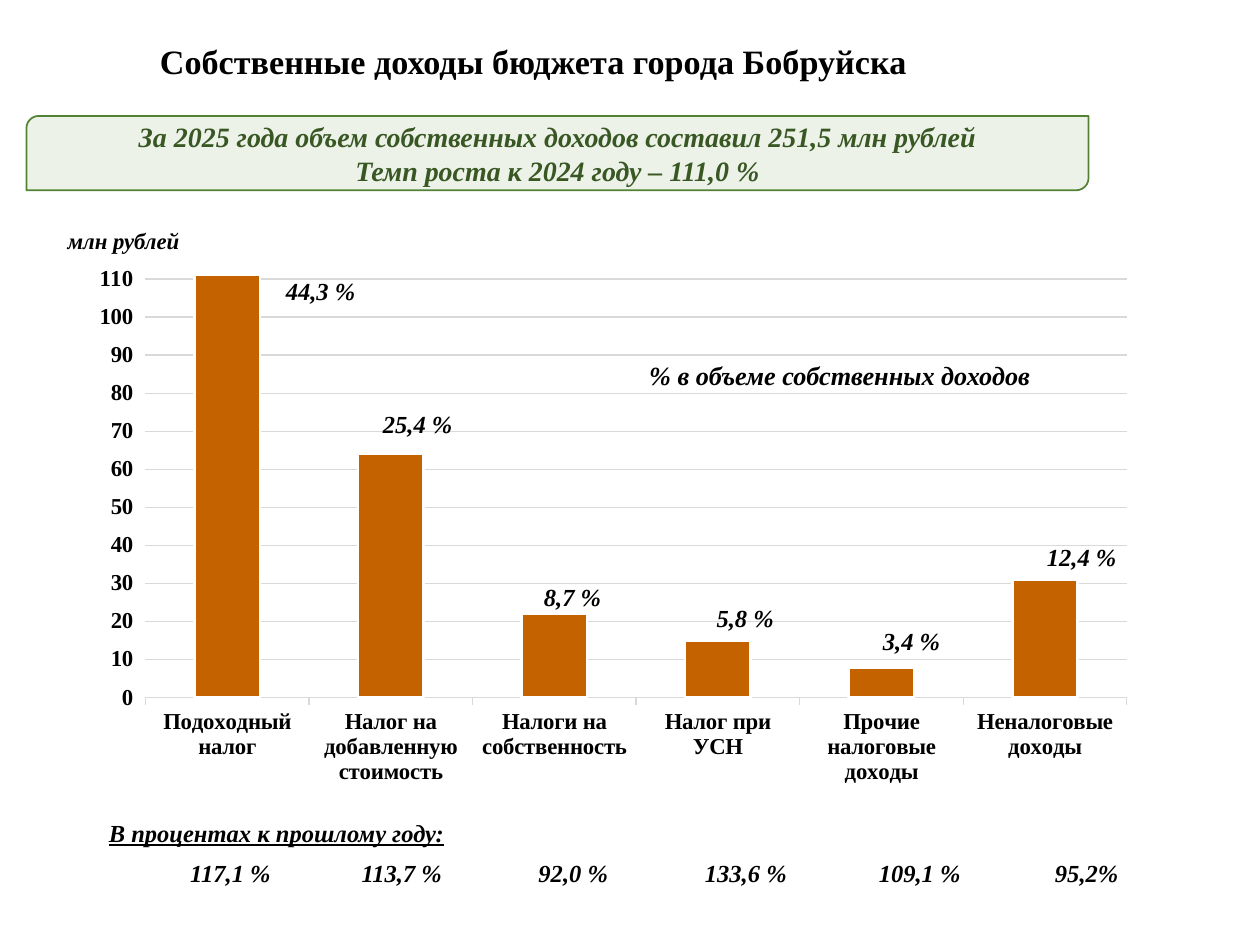
"""Build the slide on the own revenues of the Bobruisk city budget."""
import pptx
import pptx.chart.data
import pptx.dml.color
import pptx.enum.chart
import pptx.enum.shapes
import pptx.enum.text
import pptx.util
from lxml import etree

Inches = pptx.util.Inches
Pt = pptx.util.Pt
RGBColor = pptx.dml.color.RGBColor

BLACK = RGBColor(0x00, 0x00, 0x00)
WHITE = RGBColor(0xFF, 0xFF, 0xFF)
GRID_GRAY = RGBColor(0xD9, 0xD9, 0xD9)
BAR_ORANGE = RGBColor(0xC4, 0x62, 0x00)
BANNER_FILL = RGBColor(0xED, 0xF2, 0xE9)
BANNER_LINE = RGBColor(0x54, 0x82, 0x35)
BANNER_TEXT = RGBColor(0x38, 0x57, 0x23)
FONT_NAME = "Times New Roman"

TITLE = "Собственные доходы бюджета города Бобруйска"
BANNER = [
    "За 2025 года объем собственных доходов составил 251,5 млн рублей",
    "Темп роста к 2024 году – 111,0 %",
]
REVENUES = {
    "Подоходный налог": 111,
    "Налог на добавленную стоимость": 64,
    "Налоги на собственность": 22,
    "Налог при УСН": 15,
    "Прочие налоговые доходы": 8,
    "Неналоговые доходы": 31,
}
SHARES = [
    ("44,3 %", 2.16, 2.14),
    ("25,4 %", 2.93, 3.2),
    ("8,7 %", 4.16, 4.57),
    ("5,8 %", 5.53, 4.74),
    ("3,4 %", 6.85, 4.92),
    ("12,4 %", 8.2, 4.25),
]
GROWTH = [
    ("117,1 %", 1.4, 0.86),
    ("113,7 %", 2.76, 0.86),
    ("92,0 %", 4.08, 0.94),
    ("133,6 %", 5.45, 0.94),
    ("109,1 %", 6.83, 0.94),
    ("95,2%", 8.21, 0.83),
]
CAPTIONS = [
    ("млн рублей", (0.43, 1.75, 1.1, 0.32), {"size": Pt(13)}, False),
    ("% в объеме собственных доходов", (5.01, 2.8, 3.31, 0.35), {"size": Pt(15)}, False),
    ("В процентах к прошлому году:", (0.54, 6.44, 3.31, 0.34), {"underline": True}, True),
]
PLOT_LAYOUT = {"x": 0.043, "y": 0.028, "w": 0.923, "h": 0.788}
LABEL_FORMAT = {"size": Pt(14), "italic": True}


def format_font(font, color=BLACK, **values):
    for name, value in {"name": FONT_NAME, "bold": True, **values}.items():
        setattr(font, name, value)
    font.color.rgb = color


def write_lines(shape, lines, color=BLACK, **values):
    frame = shape.text_frame
    frame.text = "\n".join(lines)
    for paragraph in frame.paragraphs:
        paragraph.alignment = pptx.enum.text.PP_ALIGN.CENTER
        for run in paragraph.runs:
            format_font(run.font, color, **values)


def add_label(slide, text, box, wrap=True, **values):
    shape = slide.shapes.add_textbox(*map(Inches, box))
    write_lines(shape, [text], **{**LABEL_FORMAT, **values})
    shape.text_frame.word_wrap = wrap
    shape.text_frame.auto_size = pptx.enum.text.MSO_AUTO_SIZE.SHAPE_TO_FIT_TEXT


def add_title(slide):
    title = slide.shapes.title
    box = {"left": -0.35, "top": 0.32, "width": 9.17, "height": 0.38}
    for name, value in box.items():
        setattr(title, name, Inches(value))
    write_lines(title, [TITLE], size=Pt(19.5))
    title.text_frame.paragraphs[0].line_spacing = 0.8
    title.text_frame.auto_size = pptx.enum.text.MSO_AUTO_SIZE.NONE
    title.text_frame.vertical_anchor = pptx.enum.text.MSO_ANCHOR.MIDDLE


def add_banner(slide):
    banner = slide.shapes.add_shape(
        pptx.enum.shapes.MSO_SHAPE.ROUND_2_DIAG_RECTANGLE,
        *map(Inches, (0.21, 0.92, 8.43, 0.59)))
    banner.shadow.inherit = False
    banner.fill.solid()
    banner.fill.fore_color.rgb = BANNER_FILL
    banner.line.color.rgb = BANNER_LINE
    banner.line.width = Pt(1)
    write_lines(banner, BANNER, BANNER_TEXT, size=Pt(16), italic=True)
    banner.text_frame.vertical_anchor = pptx.enum.text.MSO_ANCHOR.MIDDLE


def set_plot_layout(chart):
    plot_area = chart.plots[0]._element.getparent()
    namespace = etree.QName(plot_area).namespace
    for old_layout in plot_area.findall(f"{{{namespace}}}layout"):
        plot_area.remove(old_layout)
    layout = etree.Element(f"{{{namespace}}}layout")
    manual = etree.SubElement(layout, f"{{{namespace}}}manualLayout")
    settings = {"layoutTarget": "inner", "xMode": "edge", "yMode": "edge", **PLOT_LAYOUT}
    for name, value in settings.items():
        etree.SubElement(manual, f"{{{namespace}}}{name}", val=str(value))
    plot_area.insert(0, layout)


def add_revenue_chart(slide):
    data = pptx.chart.data.CategoryChartData()
    data.categories = list(REVENUES)
    data.add_series("Series 1", list(REVENUES.values()))
    chart = slide.shapes.add_chart(
        pptx.enum.chart.XL_CHART_TYPE.COLUMN_CLUSTERED,
        *map(Inches, (0.79, 1.94, 8.44, 4.41)), data).chart
    chart.has_legend = False
    chart.has_title = False
    format_font(chart.font, size=Pt(13))

    plot = chart.plots[0]
    plot.gap_width = 150
    plot.vary_by_categories = False
    bars = plot.series[0].format
    bars.fill.solid()
    bars.fill.fore_color.rgb = BAR_ORANGE
    bars.line.color.rgb = WHITE
    bars.line.width = Pt(1.5)

    value_axis = chart.value_axis
    scale = {"minimum_scale": 0, "maximum_scale": 115, "major_unit": 10,
             "has_major_gridlines": True}
    for name, value in scale.items():
        setattr(value_axis, name, value)
    value_axis.format.line.fill.background()
    for line in (value_axis.major_gridlines.format.line, chart.category_axis.format.line):
        line.color.rgb = GRID_GRAY
        line.width = Pt(0.75)
    for axis in (value_axis, chart.category_axis):
        axis.major_tick_mark = pptx.enum.chart.XL_TICK_MARK.OUTSIDE
        format_font(axis.tick_labels.font, size=Pt(13))
    set_plot_layout(chart)


def main():
    presentation = pptx.Presentation()
    presentation.slide_width = Inches(10)
    presentation.slide_height = Inches(7.5)
    slide = presentation.slides.add_slide(presentation.slide_layouts[5])
    add_title(slide)
    add_revenue_chart(slide)
    add_banner(slide)
    for text, box, values, wrap in CAPTIONS:
        add_label(slide, text, box, wrap, **values)
    for text, left, top in SHARES:
        add_label(slide, text, (left, top, 0.77, 0.34))
    for text, left, width in GROWTH:
        add_label(slide, text, (left, 6.76, width, 0.34))
    presentation.save("out.pptx")


if __name__ == "__main__":
    main()
